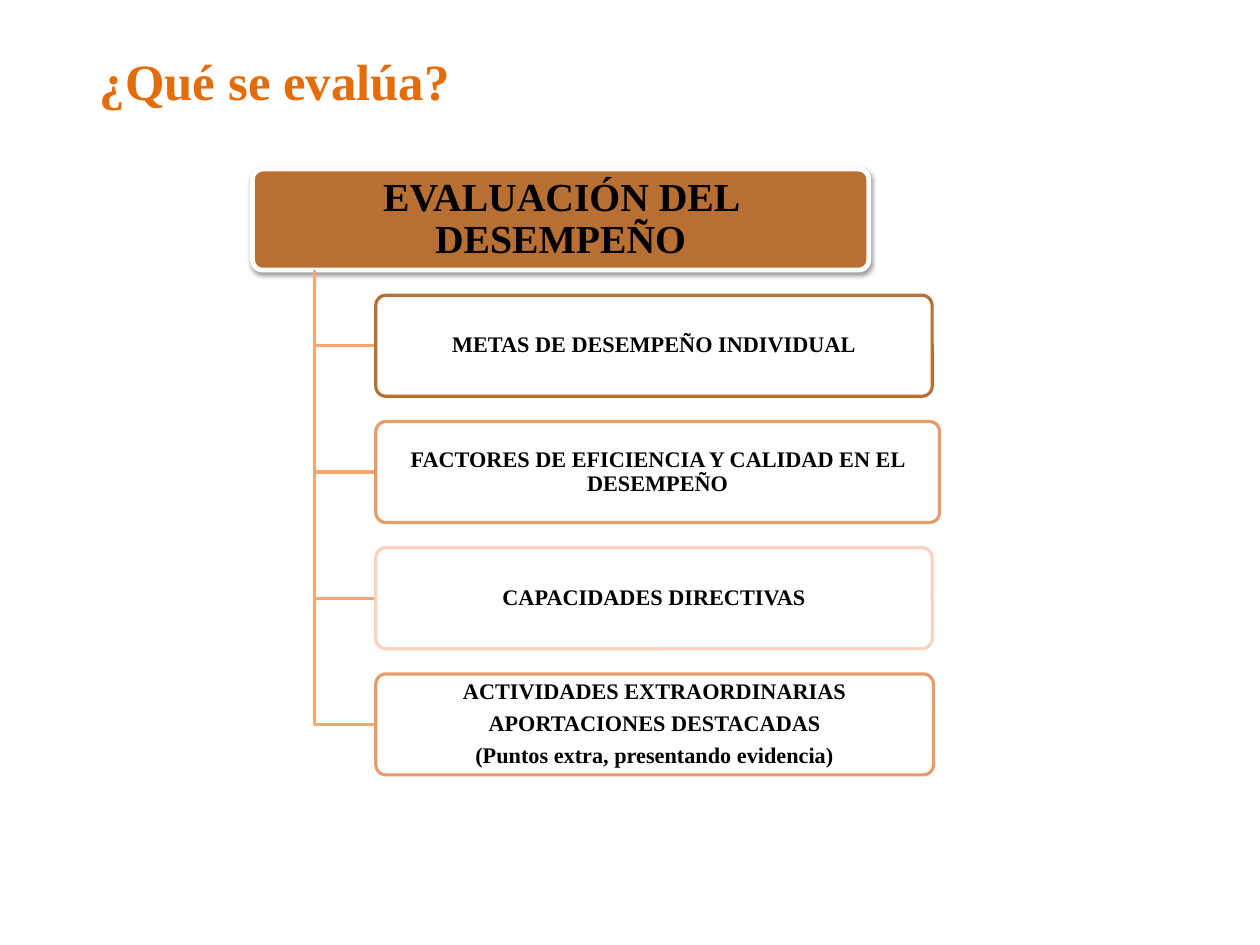
"""Build the slide that shows what a performance evaluation measures."""
from dataclasses import dataclass
from typing import Any

from lxml import etree
from pptx import Presentation
from pptx.dml.color import RGBColor
from pptx.enum.shapes import MSO_SHAPE
from pptx.enum.text import MSO_ANCHOR, MSO_AUTO_SIZE, PP_ALIGN
from pptx.oxml.ns import qn
from pptx.util import Cm, Inches, Pt

ROUNDED = MSO_SHAPE.ROUNDED_RECTANGLE
CENTER = PP_ALIGN.CENTER
MIDDLE = MSO_ANCHOR.MIDDLE
FIT_SHAPE = MSO_AUTO_SIZE.SHAPE_TO_FIT_TEXT

SLIDE_WIDTH = Cm(28)
SLIDE_HEIGHT = Cm(21)


@dataclass(frozen=True)
class Theme:
    """Colours as RRGGBB, type sizes and line widths in points."""
    font: str = "Times New Roman"
    title: str = "E46C0A"
    text: str = "000000"
    white: str = "FFFFFF"
    brown: str = "B76F34"
    orange: str = "E69B6B"
    peach: str = "FAD1BD"
    branch: str = "F8A56E"
    title_size: float = 32
    heading_size: float = 25
    item_size: float = 14
    item_gap: float = 5.2
    heading_line: float = 3
    item_line: float = 2


THEME = Theme()


def across(percent: float) -> int:
    """Turn a percentage of the slide width into a length."""
    return round(SLIDE_WIDTH * percent / 100)


def down(percent: float) -> int:
    """Turn a percentage of the slide height into a length."""
    return round(SLIDE_HEIGHT * percent / 100)


@dataclass(frozen=True)
class Grid:
    """Columns and rows of the hierarchy, with a gap between rows."""
    left: int = across(20.05)
    top: int = down(17.9)
    column: int = across(4.89)
    height: int = down(64.1)
    rows: int = 5
    gap: float = 0.25

    @property
    def box_height(self) -> int:
        """Height of one box."""
        return round(self.height / (self.rows + (self.rows - 1) * self.gap))

    def x(self, column: float) -> int:
        """Left edge of a column."""
        return round(self.left + column * self.column)

    def y(self, row: int) -> int:
        """Top edge of a row."""
        return round(self.top + row * self.box_height * (1 + self.gap))


GRID = Grid()


@dataclass(frozen=True)
class Box:
    """A box of the hierarchy, measured in grid columns."""
    lines: tuple[str, ...]
    columns: float
    line_color: str
    column: int = 2
    fill: str = THEME.white
    opacity: int = 90
    line_width: float = THEME.item_line
    size: float = THEME.item_size
    inset: float = 0.03
    shadow: bool = False


HEADING = Box(("EVALUACIÓN DEL DESEMPEÑO",), 10, THEME.white, 0, THEME.brown, 100,
              THEME.heading_line, THEME.heading_size, 0.05, True)
ITEMS = (
    Box(("METAS DE DESEMPEÑO INDIVIDUAL",), 9.03, THEME.brown),
    Box(("FACTORES DE EFICIENCIA Y CALIDAD EN EL DESEMPEÑO",), 9.15, THEME.orange),
    Box(("CAPACIDADES DIRECTIVAS",), 9.03, THEME.peach),
    Box(("ACTIVIDADES EXTRAORDINARIAS", "APORTACIONES DESTACADAS",
         "(Puntos extra, presentando evidencia)"), 9.05, THEME.orange),
)


def apply(target: Any, values: dict[str, Any]) -> None:
    """Set each named attribute on the target."""
    for name, value in values.items():
        setattr(target, name, value)


def write_lines(text_frame: Any, lines: tuple[str, ...], size: float,
                color: str, spacing: float) -> None:
    """Write centred bold paragraphs into a text frame."""
    for index, line in enumerate(lines):
        paragraph = text_frame.add_paragraph() if index else text_frame.paragraphs[0]
        paragraph.text = line
        apply(paragraph, {"alignment": CENTER, "line_spacing": spacing})
        if index:
            paragraph.space_before = Pt(THEME.item_gap)
        apply(paragraph.font, {"name": THEME.font, "size": Pt(size), "bold": True})
        paragraph.font.color.rgb = RGBColor.from_string(color)


def set_line(shape: Any, color: str, width: float) -> None:
    """Give a shape its outline and no inherited shadow."""
    shape.shadow.inherit = False
    shape.line.color.rgb = RGBColor.from_string(color)
    shape.line.width = Pt(width)


def add_alpha(color_element: Any, percent: int) -> None:
    """Set the opacity of a colour element."""
    etree.SubElement(color_element, qn("a:alpha"), val=str(percent * 1000))


def add_shadow(shape: Any) -> None:
    """Cast a soft shadow straight down."""
    effects = shape._element.spPr.find(qn("a:effectLst"))
    shadow = etree.SubElement(effects, qn("a:outerShdw"), blurRad=str(Pt(3.1)),
                              dist=str(Pt(1.6)), dir="5400000", rotWithShape="0")
    add_alpha(etree.SubElement(shadow, qn("a:srgbClr"), val=THEME.text), 38)


def add_title(slide: Any, text: str) -> None:
    """Add the slide title."""
    title = slide.shapes.add_textbox(across(1.83), down(4.65), across(40), down(7.7))
    apply(title.text_frame, {"word_wrap": True, "auto_size": FIT_SHAPE})
    write_lines(title.text_frame, (text,), THEME.title_size, THEME.title, 1.0)


def add_box(slide: Any, box: Box, row: int) -> None:
    """Add one rounded box with its text."""
    shape = slide.shapes.add_shape(ROUNDED, GRID.x(box.column), GRID.y(row),
                                   round(box.columns * GRID.column), GRID.box_height)
    shape.adjustments[0] = 0.1
    shape.fill.solid()
    shape.fill.fore_color.rgb = RGBColor.from_string(box.fill)
    set_line(shape, box.line_color, box.line_width)
    if box.opacity < 100:
        add_alpha(shape._element.spPr.find(qn("a:solidFill"))[0], box.opacity)
    if box.shadow:
        add_shadow(shape)
    side, edge = Inches(box.inset), Inches(0.02)
    apply(shape.text_frame, {"word_wrap": True, "vertical_anchor": MIDDLE,
                             "margin_left": side, "margin_right": side,
                             "margin_top": edge, "margin_bottom": edge})
    write_lines(shape.text_frame, box.lines, box.size, THEME.text, 0.9)


def add_branch(slide: Any, row: int) -> None:
    """Draw the elbow from the heading to the item in a row."""
    trunk, start = GRID.x(1), GRID.y(0) + GRID.box_height
    middle = GRID.y(row) + GRID.box_height // 2
    builder = slide.shapes.build_freeform(trunk, start)
    builder.add_line_segments([(trunk, middle), (GRID.x(2), middle)], close=False)
    branch = builder.convert_to_shape()
    branch.fill.background()
    set_line(branch, THEME.branch, THEME.item_line)


def main() -> None:
    """Build and save the presentation."""
    presentation = Presentation()
    presentation.slide_width = SLIDE_WIDTH
    presentation.slide_height = SLIDE_HEIGHT
    slide = presentation.slides.add_slide(presentation.slide_layouts[6])
    add_title(slide, "¿Qué se evalúa?")
    add_box(slide, HEADING, 0)
    for row, item in enumerate(ITEMS, start=1):
        add_branch(slide, row)
        add_box(slide, item, row)
    presentation.save("out.pptx")


if __name__ == "__main__":
    main()
